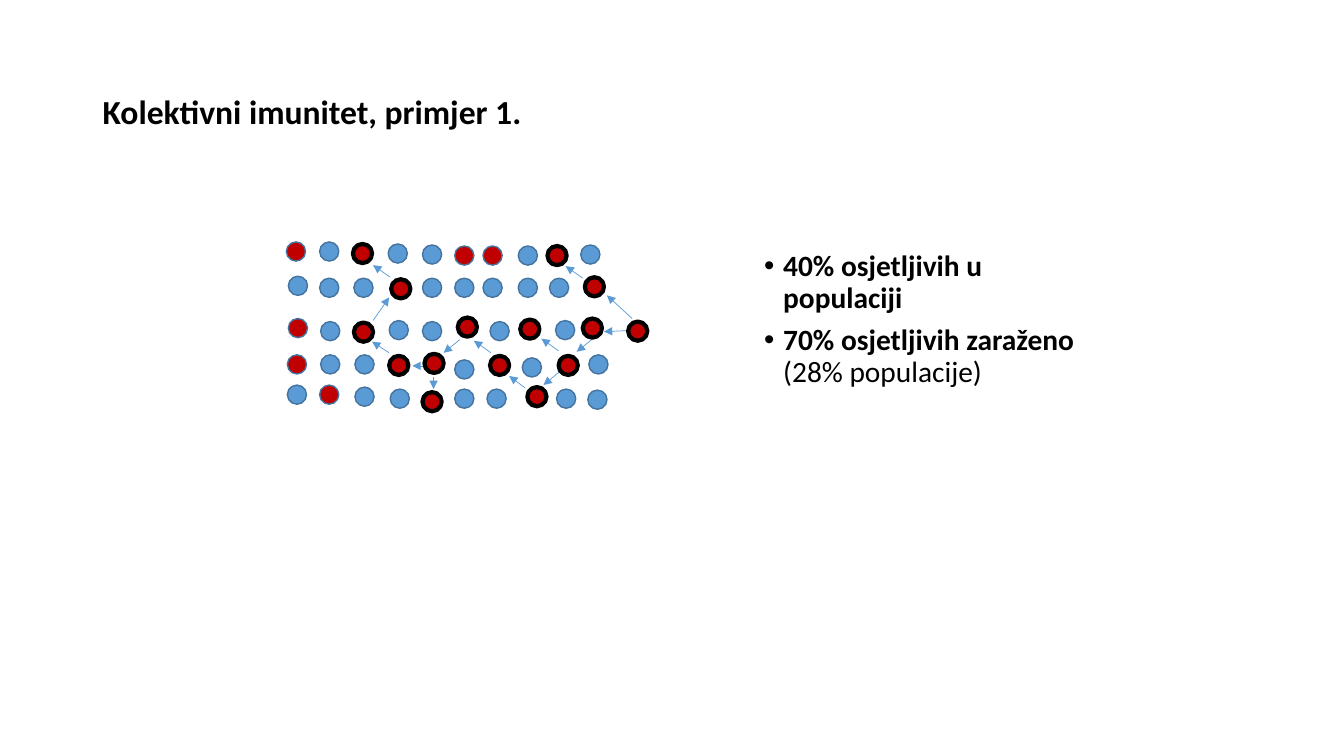
from dataclasses import dataclass

from lxml import etree
from pptx import Presentation
from pptx.dml.color import RGBColor
from pptx.enum.shapes import MSO_CONNECTOR, MSO_SHAPE
from pptx.enum.text import MSO_ANCHOR
from pptx.oxml.ns import qn
from pptx.util import Emu, Pt

STRAIGHT = MSO_CONNECTOR.STRAIGHT
OVAL = MSO_SHAPE.OVAL
TOP = MSO_ANCHOR.TOP
MIDDLE = MSO_ANCHOR.MIDDLE

PX = 9144  # 100 px to the inch
BLANK_LAYOUT = 6
DOT = 19
BULLET_INDENT = 19


@dataclass(frozen=True)
class Theme:
    font: str = "Calibri"
    title_size: float = 24
    body_size: float = 21
    bullet_gap: float = 7.5
    line_spacing: float = 0.9
    text: str = "000000"
    blue: str = "5B9BD5"
    dark_blue: str = "43739E"
    red: str = "C00000"
    black: str = "000000"
    arrow_width: float = 0.5


THEME = Theme()

# Fill, outline colour and outline width of each state
IMMUNE, SUSCEPTIBLE, INFECTED = "I", "S", "X"
STATES = {
    IMMUNE: (THEME.blue, THEME.dark_blue, 1),
    SUSCEPTIBLE: (THEME.red, THEME.dark_blue, 1),
    INFECTED: (THEME.red, THEME.black, 3),
}

# Population rows: states, left edges, top edges
POPULATION = [
    ("SIXIISSIXI",
     (284, 317, 350, 385, 419, 451, 479, 514, 543, 576),
     (240, 240, 242, 242, 243, 244, 244, 244, 244, 243)),
    ("IIIXIIIIIX",
     (286, 317, 351, 388, 419, 451, 479, 514, 545, 580),
     (274, 276, 276, 277, 276, 276, 276, 276, 276, 275)),
    ("SIXIIXIXIXX",
     (286, 318, 351, 386, 419, 454, 486, 516, 551, 578, 623),
     (316, 319, 320, 318, 319, 315, 319, 317, 318, 316, 319)),
    ("SIIXXIXIXI",
     (285, 318, 352, 386, 421, 451, 486, 518, 554, 584),
     (352, 352, 352, 353, 351, 357, 353, 355, 353, 352)),
    ("ISIIXIIXII",
     (285, 317, 352, 387, 419, 451, 483, 523, 552, 583),
     (382, 382, 384, 386, 389, 386, 386, 384, 386, 387)),
]

# Paths of infection: start x, start y, end x, end y
INFECTIONS = [
    (623, 328, 599, 329), (627, 316, 602, 293), (487, 350, 470, 338),
    (588, 336, 572, 349), (556, 368, 539, 382), (554, 348, 537, 336),
    (521, 385, 505, 373), (578, 276, 561, 264), (456, 337, 440, 350),
    (387, 275, 370, 263), (430, 374, 430, 386), (433, 363, 409, 363),
    (386, 350, 369, 339), (370, 318, 386, 295),
]

# Each bullet is a list of (text, bold)
BULLETS = [
    [("40% osjetljivih u populaciji", True)],
    [("70% osjetljivih zaraženo ", True), ("(28% populacije)", False)],
]


def px(*lengths):
    return [Emu(length * PX) for length in lengths]


def color(code):
    return RGBColor.from_string(code)


def add_box(page, left, top, width, height, anchor):
    frame = page.shapes.add_textbox(*px(left, top, width, height)).text_frame
    frame.word_wrap = True
    frame.vertical_anchor = anchor
    return frame


def add_span(para, text, *, size, bold=False):
    span = para.add_run()
    span.text = text
    span.font.name = THEME.font
    span.font.size = Pt(size)
    span.font.bold = bold
    span.font.color.rgb = color(THEME.text)


def set_bullet(para):
    para.space_before = Pt(THEME.bullet_gap)
    properties = para._p.get_or_add_pPr()
    indent = BULLET_INDENT * PX
    properties.set("marL", str(indent))
    properties.set("indent", str(-indent))
    etree.SubElement(properties, qn("a:buFont"), typeface="Arial")
    etree.SubElement(properties, qn("a:buChar"), char="•")


def add_title(page, text):
    para = add_box(page, 92, 40, 1150, 145, MIDDLE).paragraphs[0]
    para.line_spacing = THEME.line_spacing
    add_span(para, text, size=THEME.title_size, bold=True)


def add_bullets(page, bullets):
    frame = add_box(page, 748, 244, 350, 357, TOP)
    for index, spans in enumerate(bullets):
        para = frame.add_paragraph() if index else frame.paragraphs[0]
        para.line_spacing = THEME.line_spacing
        set_bullet(para)
        for text, bold in spans:
            add_span(para, text, size=THEME.body_size, bold=bold)


def add_people(page, shown_states):
    for states, lefts, tops in POPULATION:
        for state, left, top in zip(states, lefts, tops):
            if state in shown_states:
                add_person(page, state, left, top)


def add_person(page, state, left, top):
    fill, outline, width = STATES[state]
    dot = page.shapes.add_shape(OVAL, *px(left, top, DOT, DOT))
    dot.shadow.inherit = False
    dot.fill.solid()
    dot.fill.fore_color.rgb = color(fill)
    dot.line.color.rgb = color(outline)
    dot.line.width = Pt(width)


def add_arrow(page, *ends):
    arrow = page.shapes.add_connector(STRAIGHT, *px(*ends))
    arrow.line.color.rgb = color(THEME.blue)
    arrow.line.width = Pt(THEME.arrow_width)
    etree.SubElement(arrow.line._get_or_add_ln(), qn("a:tailEnd"), type="triangle")
    etree.SubElement(arrow._element.spPr, qn("a:effectLst"))


def main():
    deck = Presentation()
    deck.slide_width, deck.slide_height = px(1333, 750)
    page = deck.slides.add_slide(deck.slide_layouts[BLANK_LAYOUT])

    # Text
    add_title(page, "Kolektivni imunitet, primjer 1.")
    add_bullets(page, BULLETS)

    # Spread of infection: infected people lie above the arrows
    add_people(page, (IMMUNE, SUSCEPTIBLE))
    for ends in INFECTIONS:
        add_arrow(page, *ends)
    add_people(page, (INFECTED,))

    deck.save("out.pptx")


if __name__ == "__main__":
    main()
